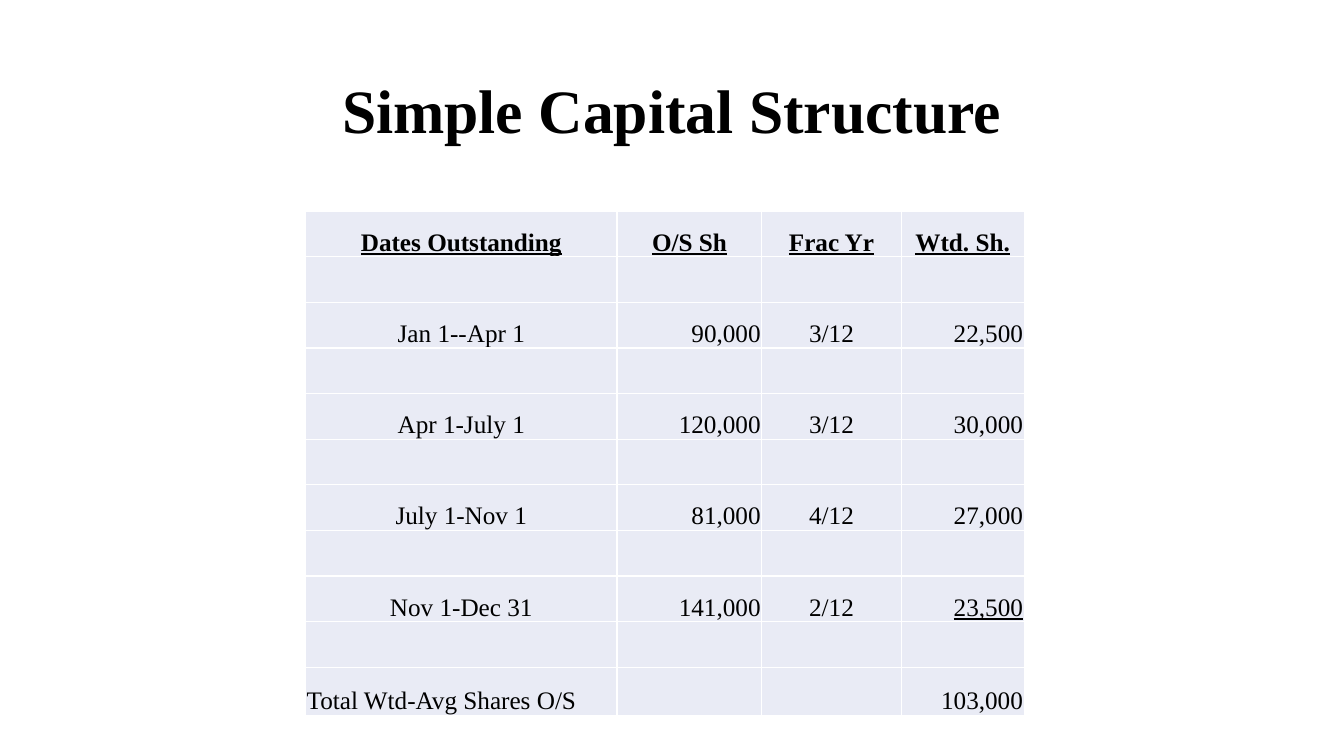
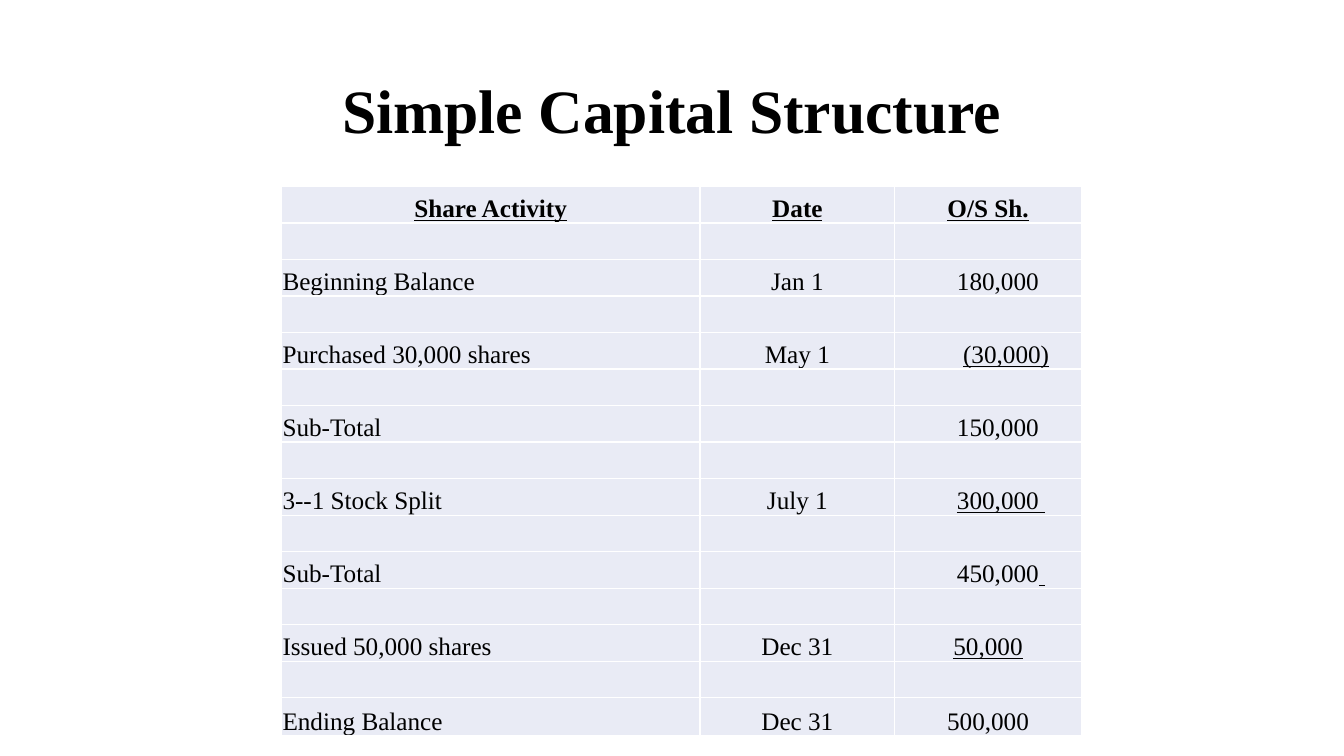
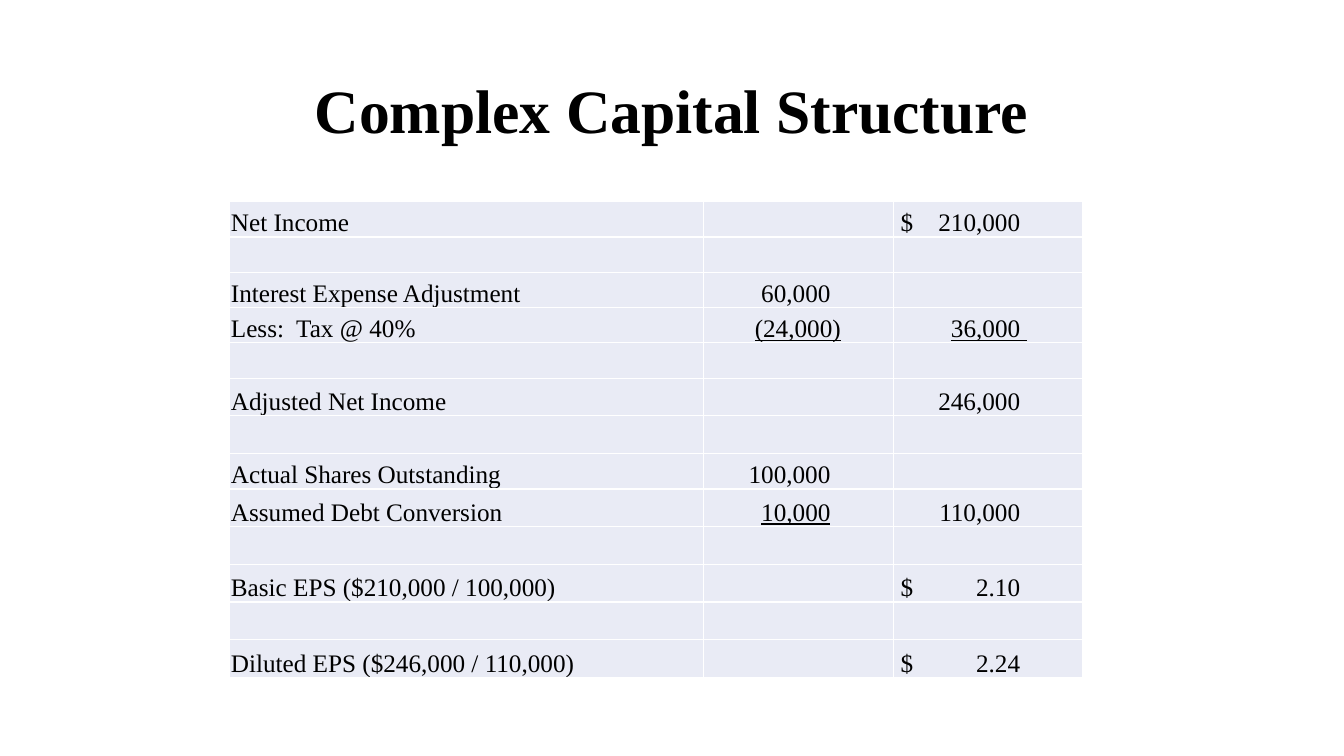
from lxml.etree import SubElement
from pptx import Presentation
from pptx.dml.color import RGBColor
from pptx.enum.text import MSO_ANCHOR, PP_ALIGN
from pptx.oxml import parse_xml
from pptx.oxml.ns import nsdecls, qn
from pptx.util import Cm, Pt

BLACK = RGBColor(0x00, 0x00, 0x00)
WHITE = RGBColor(0xFF, 0xFF, 0xFF)
PALE_BLUE = RGBColor(0xE9, 0xEB, 0xF5)
FONT = "Times New Roman"
ALIGNMENTS = {"l": PP_ALIGN.LEFT, "c": PP_ALIGN.CENTER, "r": PP_ALIGN.RIGHT}
SPACE_WIDTH = 0.16    # a trailing space hangs past the figure column
BRACKET_WIDTH = 0.26  # and so does a closing bracket
LEAD_STOP = 0.91      # start of an underline that runs ahead of its figure


class StatementDeck:
    """Holds the shared style and the current page."""

    def __init__(self):
        self.deck = Presentation()
        self.deck.slide_width, self.deck.slide_height = Cm(33.87), Cm(19.05)
        self.page = None

    def add_page(self, title):
        self.page = self.deck.slides.add_slide(self.deck.slide_layouts[5])
        box = self.page.shapes.title
        box.left, box.top, box.width, box.height = Cm(2.33), Cm(1.02), Cm(29.21), Cm(3.68)
        box.text_frame.text = title
        box.text_frame.vertical_anchor = MSO_ANCHOR.MIDDLE
        para = box.text_frame.paragraphs[0]
        para.alignment = PP_ALIGN.CENTER
        para.line_spacing = 0.9
        self.style_span(para.runs[0], 44, bold=True)

    def style_span(self, span, size, bold=False, underline=False):
        font = span.font
        font.name, font.size, font.bold, font.underline = FONT, Pt(size), bold, underline
        font.color.rgb = BLACK

    def add_table(self, left, top, widths, heights, rows, alignments,
                  figure_stop=None, header=True):
        frame = self.page.shapes.add_table(
            len(rows), len(widths), Cm(left), Cm(top), Cm(sum(widths)), Cm(sum(heights)))
        table = frame.table
        table.first_row = table.horz_banding = False
        for column, width in zip(table.columns, widths):
            column.width = Cm(width)
        for row_index, (row, height) in enumerate(zip(rows, heights)):
            table.rows[row_index].height = Cm(height)
            is_header = header and row_index == 0
            for column_index, alignment in enumerate(alignments):
                cell = table.cell(row_index, column_index)
                self.style_cell(cell)
                if row and row[column_index]:
                    self.fill_cell(cell, row[column_index], "c" if is_header else alignment,
                                   figure_stop, is_header)

    def style_cell(self, cell):
        cell.margin_left = cell.margin_right = cell.margin_top = Cm(0.03)
        cell.margin_bottom = 0
        cell.vertical_anchor = MSO_ANCHOR.BOTTOM
        cell.fill.solid()
        cell.fill.fore_color.rgb = PALE_BLUE
        properties = cell._tc.get_or_add_tcPr()
        for position, side in enumerate(("lnL", "lnR", "lnT", "lnB")):
            properties.insert(position, parse_xml(
                f'<a:{side} {nsdecls("a")} w="{Pt(1)}"><a:solidFill>'
                f'<a:srgbClr val="{WHITE}"/></a:solidFill></a:{side}>'))

    def fill_cell(self, cell, text, alignment, figure_stop, is_header):
        """Underscores switch underlining on and off; a tab leads to the figure."""
        para = cell.text_frame.paragraphs[0]
        has_tab = "\t" in text
        para.alignment = ALIGNMENTS["l" if has_tab else alignment]
        if has_tab:
            self.set_stops(para, text, figure_stop)
        for index, part in enumerate(text.split("_")):
            if part:
                span = para.add_run()
                span.text = part
                self.style_span(span, 18, is_header, is_header or index % 2 == 1)

    def set_stops(self, para, text, figure_stop):
        plain = text.replace("_", "")
        hang = {" ": SPACE_WIDTH, ")": BRACKET_WIDTH}.get(plain[-1], 0)
        stops = [("r", figure_stop + hang)]
        if plain.count("\t") == 2:
            stops.insert(0, ("l", LEAD_STOP))
        stop_list = SubElement(para._p.get_or_add_pPr(), qn("a:tabLst"))
        for kind, position in stops:
            SubElement(stop_list, qn("a:tab"), pos=str(Cm(position)), algn=kind)


def spaced(rows):
    """Put an empty row between each two rows."""
    result = [None] * (2 * len(rows) - 1)
    result[::2] = rows
    return result


def main():
    statement = StatementDeck()

    # Weighted average shares
    statement.add_page("Simple Capital Structure")
    statement.add_table(
        7.7, 5.32, [7.85, 3.65, 3.51, 3.1], [1.15] * 10 + [1.21],
        spaced([
            ("Dates Outstanding", "O/S Sh", "Frac Yr", "Wtd. Sh."),
            ("Jan 1--Apr 1", "90,000", "3/12", "22,500"),
            ("Apr 1-July 1", "120,000", "3/12", "30,000"),
            ("July 1-Nov 1", "81,000", "4/12", "27,000"),
            ("Nov 1-Dec 31", "141,000", "2/12", "_23,500_"),
            ("Total Wtd-Avg Shares O/S\t", "", "", "103,000"),
        ]), "crcr", figure_stop=7.5)

    # Share activity
    statement.add_page("Simple Capital Structure")
    statement.add_table(
        7.09, 4.7, [10.55, 4.91, 4.7], [0.92] * 14 + [0.96],
        spaced([
            ("Share Activity", "Date", "O/S Sh."),
            ("Beginning Balance", "Jan 1", "\t180,000"),
            ("Purchased 30,000 shares", "May 1", "\t_(30,000)_"),
            ("Sub-Total", "", "\t150,000"),
            ("3--1 Stock Split", "July 1", "\t_\t300,000 _"),
            ("Sub-Total", "", "\t450,000_ _"),
            ("Issued 50,000 shares", "Dec 31", "_50,000_"),
            ("Ending Balance", "Dec 31", "500,000"),
        ]), "lcc", figure_stop=3.6)

    # Basic and diluted earnings per share
    statement.add_page("Complex Capital Structure")
    statement.add_table(
        5.79, 5.08, [11.94, 4.78, 4.78],
        [0.89] * 5 + [0.95] * 2 + [0.89] + [0.95] * 5,
        [
            ("Net Income", "", " $\t210,000 "),
            None,
            ("Interest Expense Adjustment", "\t60,000", ""),
            ("Less:  Tax @ 40%", "\t_(24,000)_", "\t_36,000 _"),
            None,
            ("Adjusted Net Income", "", "\t246,000"),
            None,
            ("Actual Shares Outstanding", "\t100,000", ""),
            ("Assumed Debt Conversion", "\t_10,000_", "\t110,000"),
            None,
            ("Basic EPS ($210,000 / 100,000)", "", " $\t2.10"),
            None,
            ("Diluted EPS ($246,000 / 110,000)", "", " $\t2.24"),
        ], "lll", figure_stop=3.17, header=False)

    statement.deck.save("out.pptx")


if __name__ == "__main__":
    main()
